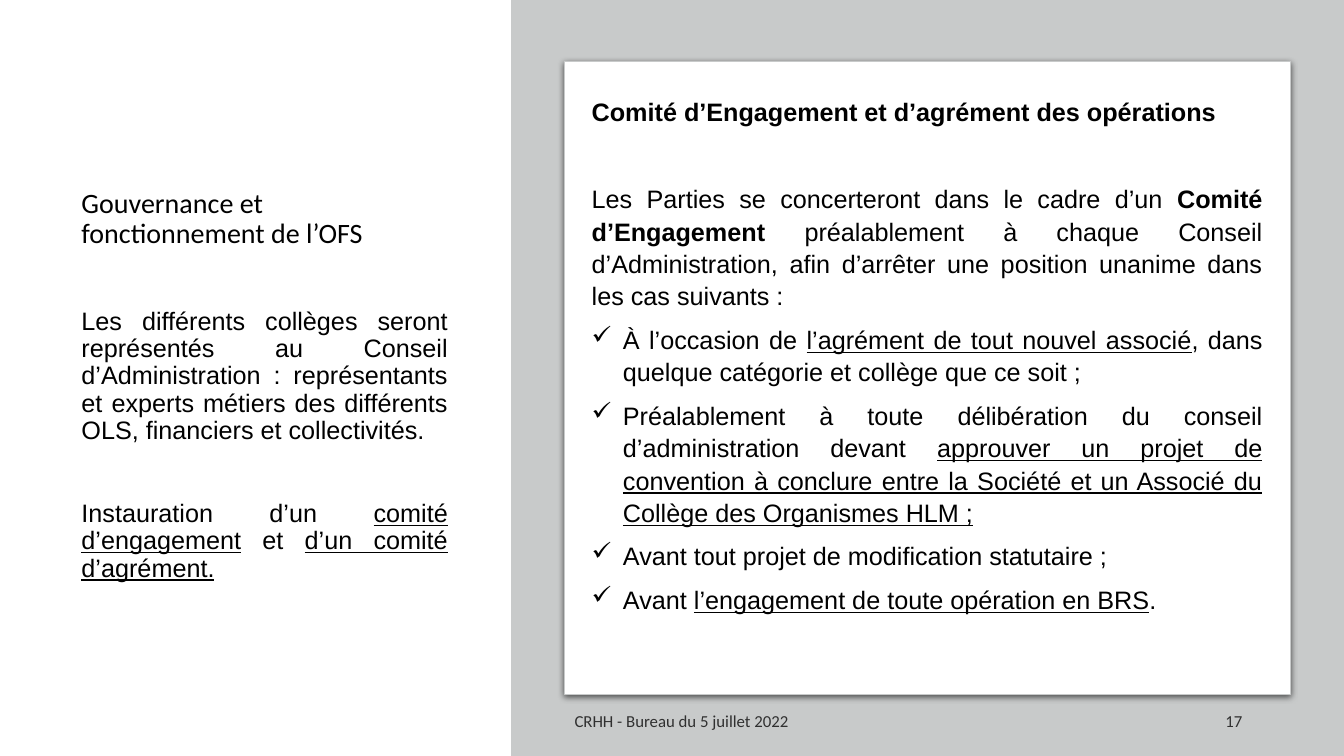
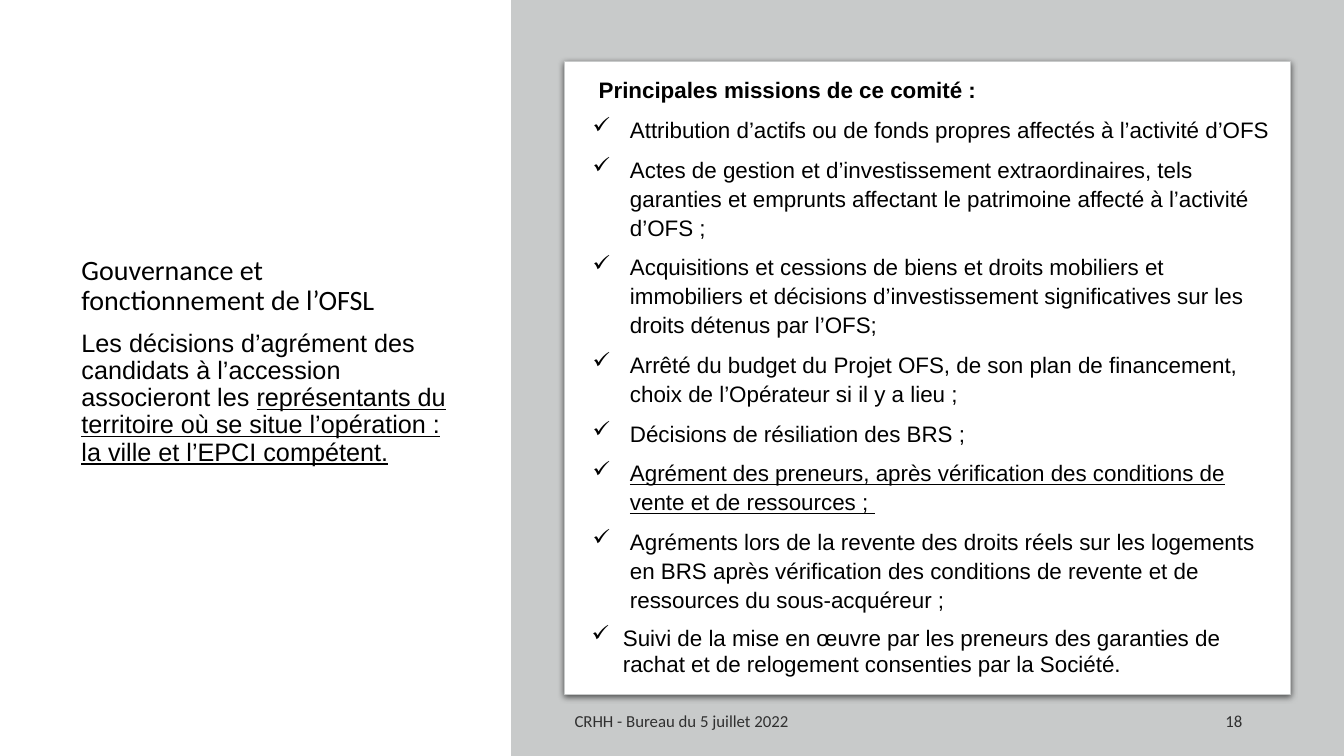
"""Build two slides on the governance of the OFS and its committee."""
from lxml import etree
from pptx import Presentation
from pptx.dml.color import RGBColor
from pptx.enum import shapes, text
from pptx.oxml.ns import qn
from pptx.util import Inches, Pt

BLACK = RGBColor(0x00, 0x00, 0x00)
WHITE = RGBColor(0xFF, 0xFF, 0xFF)
GREY = RGBColor(0xC8, 0xCA, 0xCA)
FOOTER_GREY = RGBColor(0x30, 0x30, 0x30)
LEFT, JUSTIFY, RIGHT = text.PP_ALIGN.LEFT, text.PP_ALIGN.JUSTIFY, text.PP_ALIGN.RIGHT
FOOTER = "CRHH - Bureau du 5 juillet 2022"
BOLD, UNDERLINE = "bold", "underline"


def add_panel(page, left, top, width, height, colour):
    """Add a plain filled rectangle."""
    panel = page.shapes.add_shape(
        shapes.MSO_SHAPE.RECTANGLE, Inches(left), Inches(top), Inches(width), Inches(height))
    panel.shadow.inherit = False
    panel.fill.solid()
    panel.fill.fore_color.rgb = colour
    panel.line.fill.background()
    return panel


def add_card(page):
    """Add the white card with its outline and soft shadow."""
    card = add_panel(page, 5.6, 0.61, 7.2, 6.28, WHITE)
    card.line.color.rgb = GREY
    card.line.width = Pt(0.75)
    effects = card._element.spPr.find(qn("a:effectLst"))
    shadow = etree.SubElement(
        effects, qn("a:outerShdw"), blurRad=str(Pt(4.5)), dist=str(Pt(1.5)),
        dir="5400000", algn="ctr", rotWithShape="0")
    colour = etree.SubElement(shadow, qn("a:srgbClr"), val=str(BLACK))
    etree.SubElement(colour, qn("a:alpha"), val="63000")


def add_box(page, left, top, width, height, anchor=text.MSO_ANCHOR.TOP):
    """Add a wrapping text box and return its text frame."""
    box = page.shapes.add_textbox(Inches(left), Inches(top), Inches(width), Inches(height))
    frame = box.text_frame
    frame.word_wrap = True
    frame.vertical_anchor = anchor
    return frame


def add_para(frame, spans, size=18, font="Arial", colour=BLACK, align=LEFT,
             spacing=1.0, before=0, after=0, indent=0, hanging=0):
    """Add a paragraph of plain strings and (text, style) pairs; hanging adds a tick."""
    first = frame.paragraphs[0]
    para = frame.add_paragraph() if first.runs else first
    para.alignment = align
    para.line_spacing = spacing
    para.space_before = Pt(before)
    para.space_after = Pt(after)
    properties = para._p.get_or_add_pPr()
    properties.set("marL", str(Inches(indent)))
    properties.set("indent", str(-Inches(hanging)))
    if hanging:
        bullet_colour = etree.SubElement(properties, qn("a:buClr"))
        etree.SubElement(bullet_colour, qn("a:srgbClr"), val=str(BLACK))
        etree.SubElement(properties, qn("a:buChar"), char="✓")
    para.font.size = Pt(size)
    para.font.name = font
    para.font.color.rgb = colour
    for item in spans:
        words, style = (item, None) if isinstance(item, str) else item
        span = para.add_run()
        span.text = words
        if style:
            setattr(span.font, style, True)


def add_footer(page, number):
    """Add the meeting name and the page number."""
    for left, width, words, align in ((5.6, 4.5, FOOTER, LEFT), (9.42, 3, str(number), RIGHT)):
        frame = add_box(page, left, 6.95, width, 0.4, text.MSO_ANCHOR.MIDDLE)
        add_para(frame, [words], 12, "Calibri", FOOTER_GREY, align)


def add_page(deck, number, title, top, height, remarks, align):
    """Add a slide with its left column of (space before, spans) remarks."""
    page = deck.slides.add_slide(deck.slide_layouts[6])
    frame = add_box(page, 0.71, top, 3.83, height)
    add_para(frame, [title], 20, "Calibri", spacing=0.9)
    for before, spans in remarks:
        add_para(frame, spans, align=align, spacing=0.9, before=before)
    add_panel(page, 5.07, 0, 8.26, 7.5, GREY)
    add_card(page)
    add_footer(page, number)
    return page


def add_engagement_page(deck):
    """Add the slide on the engagement committee."""
    remarks = [
        (42, ["Les différents collèges seront représentés au Conseil d’Administration : "
              "représentants et experts métiers des différents OLS, financiers et collectivités."]),
        (40, ["Instauration d’un ", ("comité d’engagement", UNDERLINE), " et ",
              ("d’un comité d’agrément.", UNDERLINE)]),
    ]
    page = add_page(deck, 17, "Gouvernance et fonctionnement de l’OFS", 1.83, 4.14,
                    remarks, JUSTIFY)
    frame = add_box(page, 5.77, 0.89, 6.85, 5.69)
    body = {"align": JUSTIFY, "spacing": 1.07}
    add_para(frame, [("Comité d’Engagement et d’agrément des opérations", BOLD)],
             after=39, **body)
    add_para(frame, [
        "Les Parties se concerteront dans le cadre d’un ", ("Comité d’Engagement", BOLD),
        " préalablement à chaque Conseil d’Administration, afin d’arrêter une position "
        "unanime dans les cas suivants :"], after=8, **body)
    cases = [
        ["À l’occasion de ", ("l’agrément de tout nouvel associé", UNDERLINE),
         ", dans quelque catégorie et collège que ce soit ;"],
        ["Préalablement à toute délibération du conseil d’administration devant ",
         ("approuver un projet de convention à conclure entre la Société et un Associé "
          "du Collège des Organismes HLM ;", UNDERLINE)],
        ["Avant tout projet de modification statutaire ;"],
        ["Avant ", ("l’engagement de toute opération en BRS", UNDERLINE), "."],
    ]
    for spans in cases:
        add_para(frame, spans, after=8, indent=0.31, hanging=0.31, **body)


def add_missions_page(deck):
    """Add the slide on the missions of the committee."""
    remarks = [
        (10, ["Les décisions d’agrément des candidats à l’accession associeront les ",
              ("représentants du territoire où se situe l’opération : "
               "la ville et l’EPCI compétent.", UNDERLINE)]),
    ]
    page = add_page(deck, 18, "Gouvernance et fonctionnement de l’OFSL", 2.49, 3.23,
                    remarks, LEFT)
    frame = add_box(page, 5.77, 0.69, 6.94, 6.2)
    body = {"size": 16, "spacing": 1.07, "after": 8}
    add_para(frame, [("Principales missions de ce comité :", BOLD)], indent=0.07, **body)
    missions = [
        "Attribution d’actifs ou de fonds propres affectés à l’activité d’OFS",
        "Actes de gestion et d’investissement extraordinaires, tels garanties et emprunts "
        "affectant le patrimoine affecté à l’activité d’OFS ;",
        "Acquisitions et cessions de biens et droits mobiliers et immobiliers et décisions "
        "d’investissement significatives sur les droits détenus par l’OFS;",
        "Arrêté du budget du Projet OFS, de son plan de financement, choix de l’Opérateur "
        "si il y a lieu ;",
        "Décisions de résiliation des BRS ;",
        ("Agrément des preneurs, après vérification des conditions de vente et de "
         "ressources ; ", UNDERLINE),
        "Agréments lors de la revente des droits réels sur les logements en BRS après "
        "vérification des conditions de revente et de ressources du sous-acquéreur ;",
    ]
    for mission in missions:
        add_para(frame, [mission], indent=0.38, hanging=0.37, **body)
    add_para(frame, ["Suivi de la mise en œuvre par les preneurs des garanties de rachat et "
                     "de relogement consenties par la Société."],
             size=16, indent=0.31, hanging=0.31)


def main():
    """Build the deck and save it."""
    deck = Presentation()
    deck.slide_width, deck.slide_height = Inches(13.33), Inches(7.5)
    add_engagement_page(deck)
    add_missions_page(deck)
    deck.save("out.pptx")


if __name__ == "__main__":
    main()
